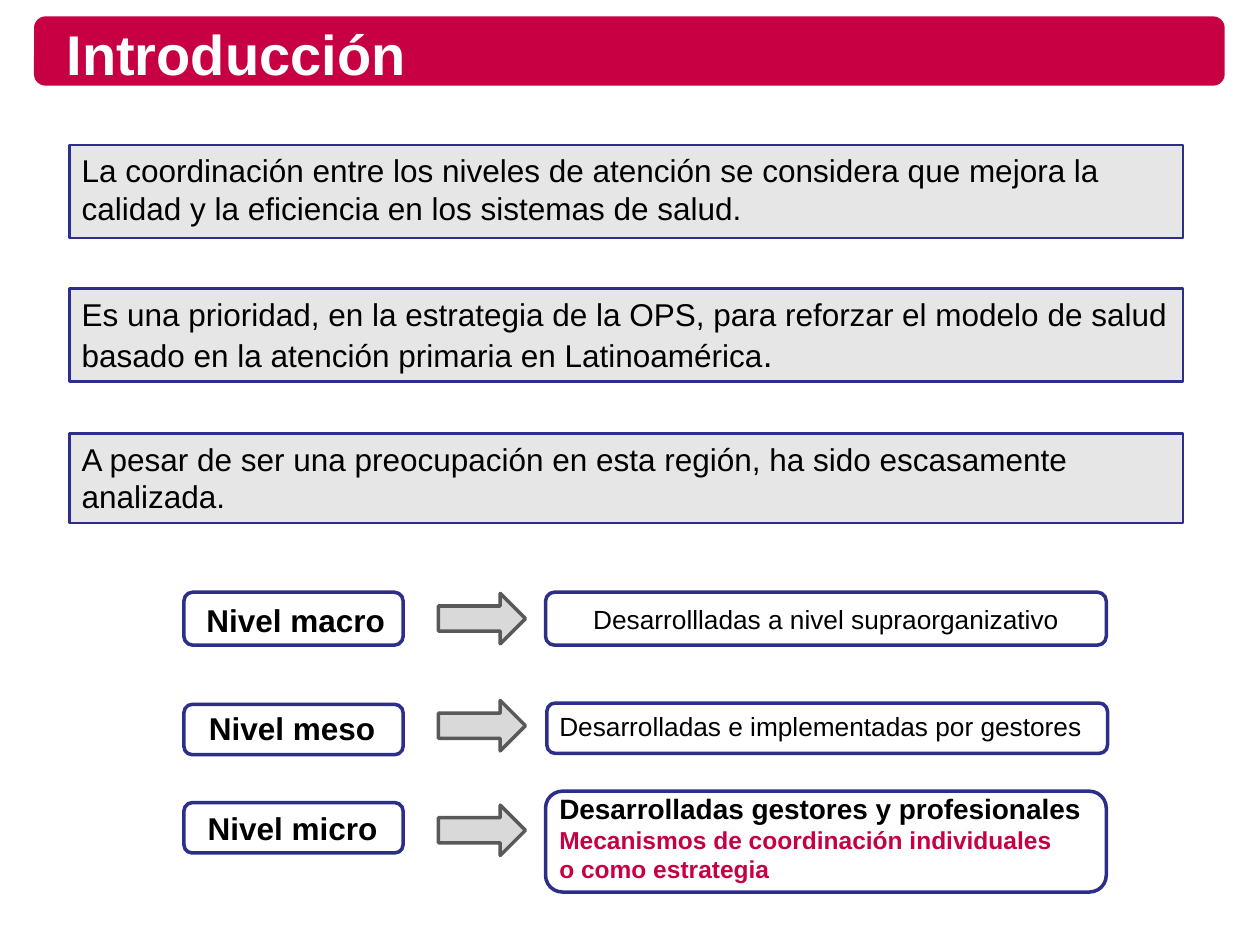
import pptx
import pptx.dml.color
import pptx.enum.shapes
import pptx.enum.text
import pptx.util

Inches = pptx.util.Inches
SHAPE = pptx.enum.shapes.MSO_SHAPE
ANCHOR = pptx.enum.text.MSO_ANCHOR

COLORS = {
    "crimson": "C70044",
    "navy": "2D2D8A",
    "panel": "E6E6E6",
    "arrow": "D9D9D9",
    "arrow_edge": "595959",
    "white": "FFFFFF",
    "black": "000000",
}

STATEMENTS = [
    (1.15, 0.74, ["La coordinación entre los niveles de atención se considera que "
                  "mejora la calidad y la eficiencia en los sistemas de salud."]),
    (2.29, 0.74, ["Es una prioridad, en la estrategia de la OPS, para reforzar el "
                  "modelo de salud basado en la atención primaria en Latinoamérica", "."]),
    (3.44, 0.71, ["A pesar de ser una preocupación en esta región, ha sido "
                  "escasamente analizada."]),
]

# Each level: name, then (left, top, width, height) of every part within the
# diagram, then the lines of its description as (text, size, bold, color).
LEVELS = [
    ("Nivel macro", (0, 0, 1.74, 0.42), (0.08, 0.02, 1.65, 0.4), (2.02, 0.01, 0.69, 0.4),
     (2.87, 0, 4.45, 0.42), (3.15, 0.04, 3.93, 0.35),
     [("Desarrollladas a nivel supraorganizativo", 15, False, "black")]),
    ("Nivel meso", (0, 0.89, 1.74, 0.4), (0.1, 0.88, 1.65, 0.4), (2.02, 0.86, 0.69, 0.4),
     (2.88, 0.88, 4.45, 0.4), (2.88, 0.89, 4.52, 0.35),
     [("Desarrolladas e implementadas por gestores", 15, False, "black")]),
    ("Nivel micro", (0, 1.67, 1.74, 0.4), (0.09, 1.67, 1.65, 0.4), (2.02, 1.69, 0.69, 0.4),
     (2.87, 1.58, 4.45, 0.8), (2.88, 1.53, 4.52, 0.84),
     [("Desarrolladas gestores y profesionales", 16, True, "black"),
      ("Mecanismos de coordinación individuales", 14, True, "crimson"),
      ("o como estrategia", 14, True, "crimson")]),
]


def rgb(name):
    return pptx.dml.color.RGBColor.from_string(COLORS[name])


def add_box(page, kind, place, fill, edge=None, weight=2):
    box = page.shapes.add_shape(kind, *map(Inches, place))
    box.shadow.inherit = False
    box.fill.solid()
    box.fill.fore_color.rgb = rgb(fill)
    if edge:
        box.line.color.rgb = rgb(edge)
        box.line.width = pptx.util.Pt(weight)
    else:
        box.line.fill.background()
    return box


def write_lines(box, lines, anchor=ANCHOR.TOP):
    """Fill the box with left-aligned lines of (text, size, bold, color)."""
    frame = box.text_frame
    frame.word_wrap = True
    frame.vertical_anchor = anchor
    for index, (text, size, bold, color) in enumerate(lines):
        para = frame.add_paragraph() if index else frame.paragraphs[0]
        para.text = text
        para.alignment = pptx.enum.text.PP_ALIGN.LEFT
        para.font.name = "Arial"
        para.font.size = pptx.util.Pt(size)
        para.font.bold = bold
        para.font.color.rgb = rgb(color)


def add_text(page, place, lines, anchor=ANCHOR.TOP):
    write_lines(page.shapes.add_textbox(*map(Inches, place)), lines, anchor)


def add_title(page, left, top, width, height):
    add_box(page, SHAPE.ROUNDED_RECTANGLE, (left, top, width, height), "crimson")
    add_text(page, (left + 0.16, top + 0.06, width - 0.38, height - 0.08),
             [("Introducción", 32, True, "white")], ANCHOR.MIDDLE)


def add_statement(page, left, top, width, height, parts):
    """Add a grey panel; a second part is the larger closing full stop."""
    box = add_box(page, SHAPE.RECTANGLE, (left, top, width, height), "panel", "navy", 1.5)
    write_lines(box, [(parts[0], 18, False, "black")])
    for text in parts[1:]:
        span = box.text_frame.paragraphs[0].add_run()
        span.text = text
        span.font.size = pptx.util.Pt(20)


def add_levels(page, left, top):
    def shift(place):
        return (left + place[0], top + place[1], *place[2:])

    for name, name_box, name_text, arrow, detail_box, detail_text, lines in LEVELS:
        for place in (name_box, detail_box):
            add_box(page, SHAPE.ROUNDED_RECTANGLE, shift(place), "white", "navy")
        add_text(page, shift(name_text), [(name, 18, True, "black")])
        add_text(page, shift(detail_text), lines)
        add_box(page, SHAPE.RIGHT_ARROW, shift(arrow), "arrow", "arrow_edge")


def main():
    deck = pptx.Presentation()
    deck.slide_width, deck.slide_height = Inches(10), Inches(7.5)
    page = deck.slides.add_slide(deck.slide_layouts[6])
    add_title(page, 0.27, 0.13, 9.45, 0.55)
    for top, height, parts in STATEMENTS:
        add_statement(page, 0.55, top, 8.84, height, parts)
    add_levels(page, 1.46, 4.7)
    deck.save("out.pptx")


if __name__ == "__main__":
    main()
